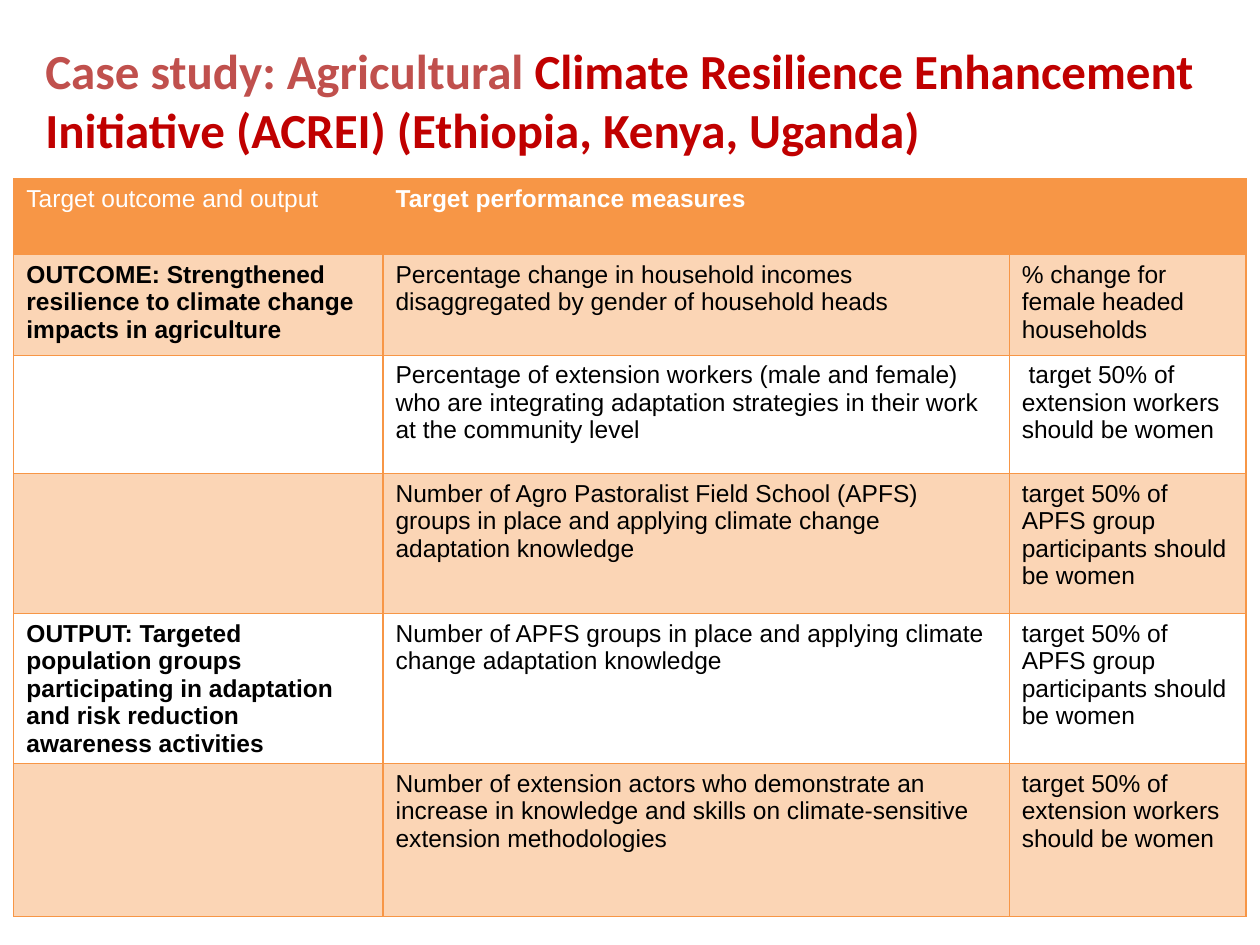
"""Build the ACREI case study slide with its table of targets."""
from dataclasses import dataclass

from lxml import etree
from pptx import Presentation
from pptx.dml.color import RGBColor
from pptx.enum import text as t
from pptx.oxml import ns
from pptx.util import Inches, Pt


@dataclass(frozen=True)
class Theme:
    accent: str = "F79646"
    tint: int = 40
    rose: str = "C0504D"
    red: str = "C00000"
    ink: str = "000000"
    light: str = "FFFFFF"
    head: str = "Calibri"
    body: str = "Arial"
    big: int = 28
    small: int = 14
    rule: float = 0.75


@dataclass(frozen=True)
class Row:
    height: float
    goal: str
    measure: str
    target: str


THEME = Theme()
WIDTHS = (2.93, 4.97, 1.88)
GROUP = "target 50% of APFS group participants should be women"
STAFF = "target 50% of extension workers should be women"
ROWS = (
    Row(0.6, "Target outcome and output", "Target performance measures", ""),
    Row(0.8, "OUTCOME: Strengthened resilience to climate change impacts in agriculture",
        "Percentage change in household incomes disaggregated by gender of household heads",
        "% change for female headed households"),
    Row(0.94, "",
        "Percentage of extension workers (male and female) who are integrating "
        "adaptation strategies in their work at the community level",
        " " + STAFF),
    Row(1.11, "",
        "Number of Agro Pastoralist Field School (APFS) groups in place and "
        "applying climate change adaptation knowledge",
        GROUP),
    Row(1.18, "OUTPUT: Targeted population groups participating in adaptation "
        "and risk reduction awareness activities",
        "Number of APFS groups in place and applying climate change adaptation knowledge",
        GROUP),
    Row(1.21, "",
        "Number of extension actors who demonstrate an increase in knowledge "
        "and skills on climate-sensitive extension methodologies",
        STAFF),
)


def write(para, words: str, *, font: str, size: int, color: str, bold: bool) -> None:
    """Add one formatted run to a paragraph."""
    run = para.add_run()
    run.text = words
    run.font.name = font
    run.font.size = Pt(size)
    run.font.bold = bold
    run.font.color.rgb = RGBColor.from_string(color)


def paint(cell, alpha: int) -> None:
    """Fill a cell with the accent colour at a given opacity in percent."""
    if not alpha:
        cell.fill.background()
        return
    cell.fill.solid()
    cell.fill.fore_color.rgb = RGBColor.from_string(THEME.accent)
    if alpha < 100:
        color = cell._tc.tcPr.find(".//" + ns.qn("a:srgbClr"))
        etree.SubElement(color, ns.qn("a:alpha"), val=str(alpha * 1000))


def edge(cell) -> None:
    """Draw the accent rule on all four sides of a cell."""
    props = cell._tc.get_or_add_tcPr()
    for spot, side in enumerate("LRTB"):
        line = etree.Element(ns.qn(f"a:ln{side}"), w=str(Pt(THEME.rule)))
        fill = etree.SubElement(line, ns.qn("a:solidFill"))
        etree.SubElement(fill, ns.qn("a:srgbClr"), val=THEME.accent)
        props.insert(spot, line)


def title(slide) -> None:
    """Add the two-colour heading."""
    box = slide.shapes.add_textbox(Inches(0.36), Inches(0.32), Inches(9.78), Inches(1.36))
    frame = box.text_frame
    frame.word_wrap = True
    frame.vertical_anchor = t.MSO_ANCHOR.TOP
    frame.margin_left = frame.margin_right = frame.margin_top = frame.margin_bottom = 0
    for words, color in (
        ("Case study: Agricultural ", THEME.rose),
        ("Climate Resilience Enhancement Initiative (ACREI) (Ethiopia, Kenya, Uganda)", THEME.red),
    ):
        write(frame.paragraphs[0], words, font=THEME.head, size=THEME.big, color=color, bold=True)


def grid(slide, rows: tuple[Row, ...]) -> None:
    """Add the table of outcomes, measures and targets."""
    high = sum(row.height for row in rows)
    table = slide.shapes.add_table(
        len(rows), len(WIDTHS), Inches(0.11), Inches(1.42), Inches(sum(WIDTHS)), Inches(high)
    ).table
    table.first_row = table.horz_banding = False
    for col, width in zip(table.columns, WIDTHS):
        col.width = Inches(width)
    for r, row in enumerate(rows):
        table.rows[r].height = Inches(row.height)
        top = r == 0
        alpha = 100 if top else THEME.tint * (r % 2)
        for c, words in enumerate((row.goal, row.measure, row.target)):
            cell = table.cell(r, c)
            paint(cell, alpha)
            edge(cell)
            if words:
                write(cell.text_frame.paragraphs[0], words, font=THEME.body, size=THEME.small,
                      color=THEME.light if top else THEME.ink, bold=top == (c == 1) and c < 2)


def main() -> None:
    """Build and save the slide."""
    deck = Presentation()
    deck.slide_width, deck.slide_height = Inches(10), Inches(7.5)
    slide = deck.slides.add_slide(deck.slide_layouts[6])
    grid(slide, ROWS)
    title(slide)
    deck.save("out.pptx")


if __name__ == "__main__":
    main()
